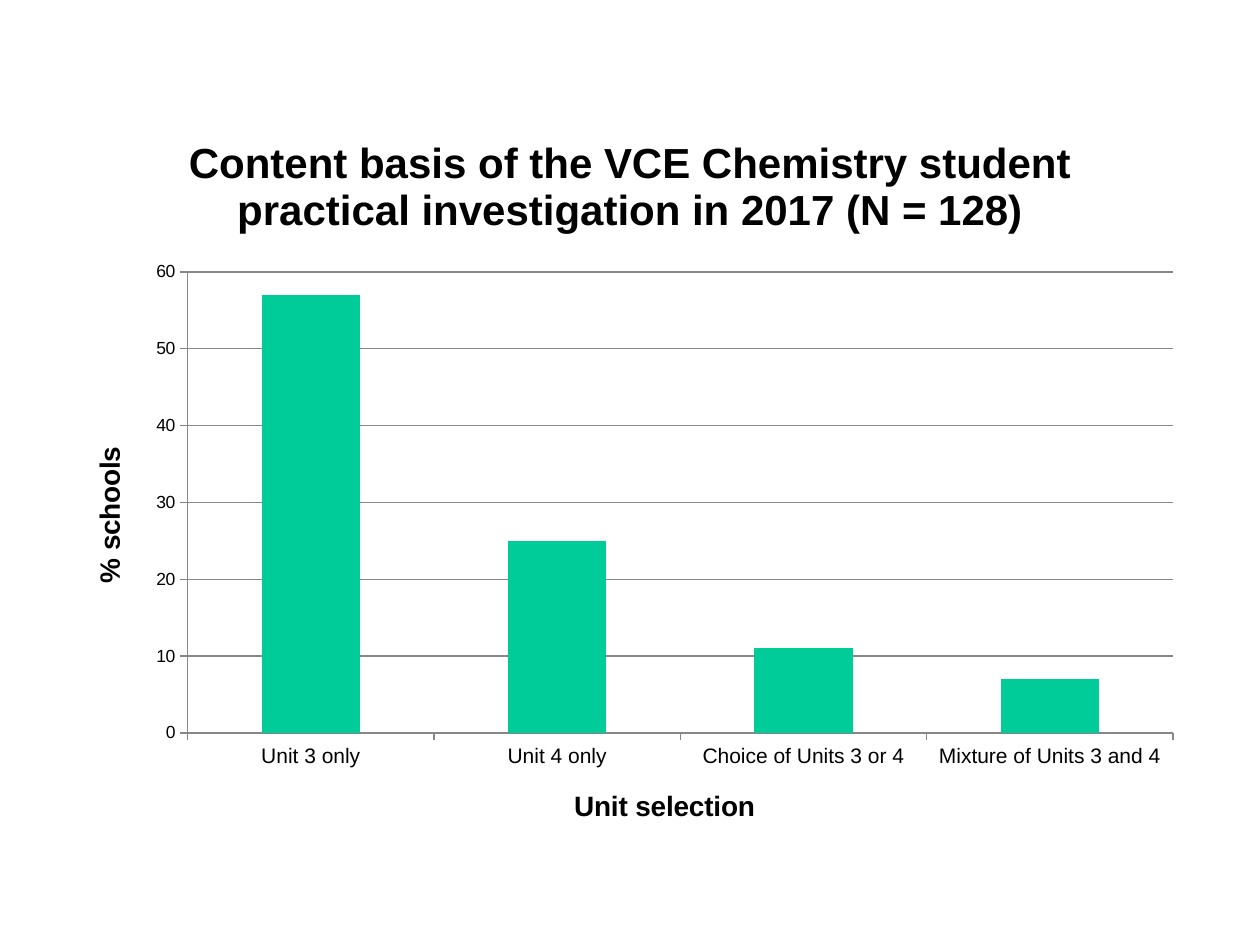
from pptx import Presentation
from pptx.chart.data import CategoryChartData
from pptx.dml.color import RGBColor
from pptx.enum.chart import XL_CHART_TYPE, XL_TICK_MARK
from pptx.util import Inches, Pt

COLORS = {"text": "000000", "bar": "00CC99", "line": "878787"}
DATA = {
    "Unit 3 only": 57,
    "Unit 4 only": 25,
    "Choice of Units 3 or 4": 11,
    "Mixture of Units 3 and 4": 7,
}


def assign(item, values):
    """Set each named attribute of the item."""
    for name, value in values.items():
        setattr(item, name, value)


def color(name):
    """Return the named colour."""
    return RGBColor.from_string(COLORS[name])


def style(font, size, bold=False):
    """Format a font."""
    assign(font, {"name": "Arial", "size": Pt(size), "bold": bold})
    font.color.rgb = color("text")


def label(owner, text, size):
    """Give a chart or an axis a bold title."""
    owner.has_title = True
    frame = owner.chart_title if hasattr(owner, "chart_title") else owner.axis_title
    part = frame.text_frame.paragraphs[0]
    run = part.add_run()
    run.text = text
    style(run.font, size, True)


def rule(line):
    """Format an axis or grid line."""
    line.color.rgb = color("line")
    line.width = Pt(0.75)


def draw_axis(axis, title, size, grid):
    """Format one axis with its title."""
    assign(axis, {
        "has_major_gridlines": grid,
        "major_tick_mark": XL_TICK_MARK.OUTSIDE,
        "minor_tick_mark": XL_TICK_MARK.NONE,
    })
    rule(axis.format.line)
    if grid:
        rule(axis.major_gridlines.format.line)
    style(axis.tick_labels.font, size)
    label(axis, title, 16)


def draw_chart(slide, box):
    """Place the column chart in the box."""
    data = CategoryChartData()
    data.categories = list(DATA)
    data.add_series("Series 1", list(DATA.values()))
    chart = slide.shapes.add_chart(XL_CHART_TYPE.COLUMN_CLUSTERED, *box, data).chart
    style(chart.font, 10)
    chart.has_legend = False
    label(chart, "Content basis of the VCE Chemistry student practical investigation in 2017 (N = 128)", 24)
    chart.chart_title.include_in_layout = False
    plot = chart.plots[0]
    assign(plot, {"gap_width": 150, "vary_by_categories": False})
    fill = plot.series[0].format.fill
    fill.solid()
    fill.fore_color.rgb = color("bar")
    draw_axis(chart.category_axis, "Unit selection", 12, False)
    draw_axis(chart.value_axis, "% schools", 10, True)
    assign(chart.value_axis, {"minimum_scale": 0, "maximum_scale": 60, "major_unit": 10})


def main():
    """Build and save the slide."""
    deck = Presentation()
    assign(deck, {"slide_width": Inches(10), "slide_height": Inches(7.5)})
    slide = deck.slides.add_slide(deck.slide_layouts[6])
    draw_chart(slide, [Inches(n) for n in (0.51, 0.84, 8.98, 5.91)])
    deck.save("out.pptx")


if __name__ == "__main__":
    main()
